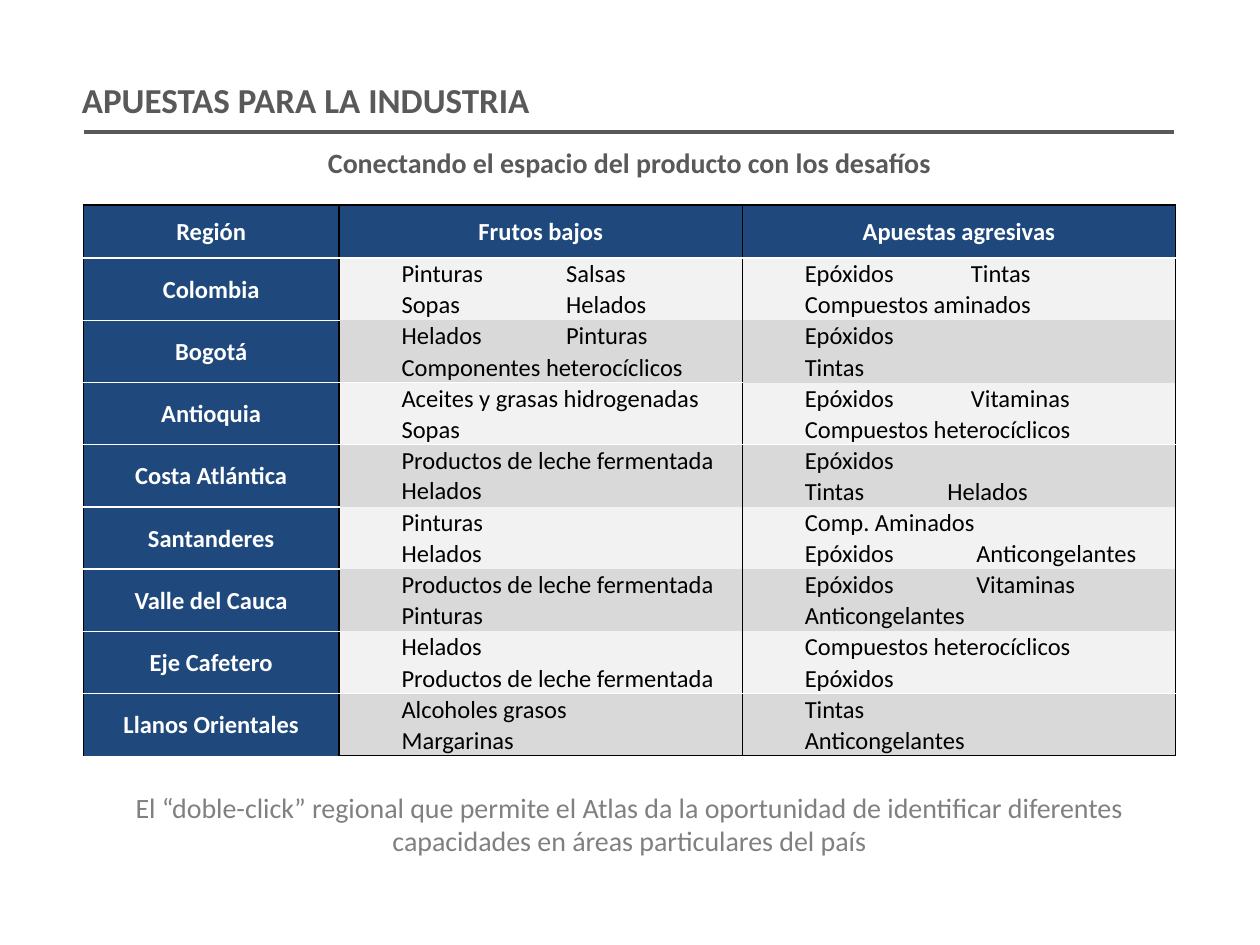
from dataclasses import dataclass

import pptx
import pptx.dml.color
import pptx.enum.shapes
import pptx.enum.text
import pptx.oxml
import pptx.oxml.ns
import pptx.util

Pt = pptx.util.Pt
RGBColor = pptx.dml.color.RGBColor
Align = pptx.enum.text.PP_ALIGN
qn = pptx.oxml.ns.qn

NAVY = RGBColor(0x1F, 0x49, 0x7D)
WHITE = RGBColor(0xFF, 0xFF, 0xFF)
BLACK = RGBColor(0x00, 0x00, 0x00)
DARK = RGBColor(0x59, 0x59, 0x59)
GREY = RGBColor(0x80, 0x80, 0x80)
BANDS = (RGBColor(0xF2, 0xF2, 0xF2), RGBColor(0xD9, 0xD9, 0xD9))
FONT = "Calibri"


@dataclass
class Entry:
    text: str
    second: str = ""
    tab: float = 95


@dataclass
class Region:
    name: str
    low: tuple[Entry, Entry]
    bold: tuple[Entry, Entry]
    rules: tuple[bool, bool] = (False, False)  # white rule below each product column
    joined: bool = False  # both low entries share one cell


HEADERS = ("Región", "Frutos bajos", "Apuestas agresivas")
REGIONS = (
    Region("Colombia", (Entry("Pinturas", "Salsas", 94), Entry("Sopas", "Helados", 94)),
           (Entry("Epóxidos", "Tintas"), Entry("Compuestos aminados"))),
    Region("Bogotá", (Entry("Helados", "Pinturas", 94), Entry("Componentes heterocíclicos")),
           (Entry("Epóxidos"), Entry("Tintas")), rules=(True, False)),
    Region("Antioquia", (Entry("Aceites y grasas hidrogenadas"), Entry("Sopas")),
           (Entry("Epóxidos", "Vitaminas"), Entry("Compuestos heterocíclicos")),
           rules=(True, True)),
    Region("Costa Atlántica", (Entry("Productos de leche fermentada"), Entry("Helados")),
           (Entry("Epóxidos"), Entry("Tintas", "Helados", 81.5)), joined=True),
    Region("Santanderes", (Entry("Pinturas"), Entry("Helados")),
           (Entry("Comp. Aminados"), Entry("Epóxidos", "Anticongelantes", 98))),
    Region("Valle del Cauca", (Entry("Productos de leche fermentada"), Entry("Pinturas")),
           (Entry("Epóxidos", "Vitaminas", 98), Entry("Anticongelantes"))),
    Region("Eje Cafetero", (Entry("Helados"), Entry("Productos de leche fermentada")),
           (Entry("Compuestos heterocíclicos"), Entry("Epóxidos")), rules=(True, True)),
    Region("Llanos Orientales", (Entry("Alcoholes grasos"), Entry("Margarinas")),
           (Entry("Tintas"), Entry("Anticongelantes"))),
)


def add_run(p, text: str, size: float, color: RGBColor, bold: bool = False) -> None:
    r = p.add_run()
    r.text = text
    r.font.name, r.font.size, r.font.bold = FONT, Pt(size), bold
    r.font.color.rgb = color


def add_text(s, left: float, top: float, width: float, height: float, text: str, size: float,
             color: RGBColor, bold: bool = False, align=Align.CENTER) -> None:
    tf = s.shapes.add_textbox(Pt(left), Pt(top), Pt(width), Pt(height)).text_frame
    tf.word_wrap = True
    tf.margin_left = tf.margin_right = tf.margin_top = tf.margin_bottom = 0
    tf.paragraphs[0].alignment = align
    add_run(tf.paragraphs[0], text, size, color, bold)


def style_cell(cell, fill: RGBColor, top: RGBColor | None, bottom: RGBColor | None,
               indent: float = 0.72) -> None:
    cell.margin_left = Pt(indent)
    cell.margin_right = cell.margin_top = Pt(0.72)
    cell.margin_bottom = 0
    cell.vertical_anchor = pptx.enum.text.MSO_ANCHOR.MIDDLE
    tc_pr = cell._tc.get_or_add_tcPr()
    for tag, color in (("a:lnL", BLACK), ("a:lnR", BLACK), ("a:lnT", top), ("a:lnB", bottom)):
        ln = tc_pr.makeelement(qn(tag), {"w": str(Pt(1))})
        tc_pr.append(ln)
        if color is None:
            ln.append(ln.makeelement(qn("a:noFill"), {}))
        else:
            solid = ln.makeelement(qn("a:solidFill"), {})
            solid.append(solid.makeelement(qn("a:srgbClr"), {"val": str(color)}))
            ln.append(solid)
    cell.fill.solid()
    cell.fill.fore_color.rgb = fill


def add_label(cell, text: str) -> None:
    p = cell.text_frame.paragraphs[0]
    p.alignment = Align.CENTER
    add_run(p, text, 14, WHITE, True)


def add_entry(p, entry: Entry) -> None:
    text = entry.text
    if entry.second:
        p_pr = p._p.get_or_add_pPr()
        tabs = p_pr.makeelement(qn("a:tabLst"), {})
        tabs.append(tabs.makeelement(qn("a:tab"), {"pos": str(Pt(entry.tab)), "algn": "l"}))
        p_pr.append(tabs)
        text += "\t" + entry.second
    add_run(p, text, 14, BLACK)


def add_region(table, i: int, region: Region) -> None:
    row = 1 + 2 * i
    last = i == len(REGIONS) - 1
    label = table.cell(row, 0)
    for k in range(2):
        style_cell(table.cell(row + k, 0), NAVY, WHITE if k == 0 else None,
                   (BLACK if last else WHITE) if k == 1 else None)
    label.merge(table.cell(row + 1, 0))
    add_label(label, region.name)

    above = REGIONS[i - 1].rules if i else (True, True)
    for col, entries in enumerate((region.low, region.bold), start=1):
        below = BLACK if last else WHITE if region.rules[col - 1] else None
        for k in range(2):
            style_cell(table.cell(row + k, col), BANDS[i % 2],
                       WHITE if k == 0 and above[col - 1] else None,
                       below if k == 1 else None, indent=35.7)
        joined = region.joined and col == 1
        if joined:
            table.cell(row, col).merge(table.cell(row + 1, col))
        for k, entry in enumerate(entries):
            tf = table.cell(row if joined else row + k, col).text_frame
            p = tf.add_paragraph() if joined and k else tf.paragraphs[0]
            add_entry(p, entry)


def main() -> None:
    prs = pptx.Presentation()
    prs.slide_width, prs.slide_height = Pt(720), Pt(540)
    s = prs.slides.add_slide(prs.slide_layouts[6])

    # Title rule
    line = s.shapes.add_connector(pptx.enum.shapes.MSO_CONNECTOR.STRAIGHT,
                                  Pt(671), Pt(75.6), Pt(48.3), Pt(75.6))
    line.line.color.rgb, line.line.width = DARK, Pt(2)
    sp_pr = line._element.spPr
    sp_pr.append(sp_pr.makeelement(qn("a:effectLst"), {}))

    # Table of regions
    widths = (146.2, 230.4, 247.6)
    heights = [30.5] + [17.8] * (2 * len(REGIONS))
    table = s.shapes.add_table(len(heights), len(widths), Pt(47.6), Pt(117),
                               Pt(sum(widths)), Pt(sum(heights))).table
    table.first_row = table.horz_banding = False
    for column, width in zip(table.columns, widths):
        column.width = Pt(width)
    for row, height in zip(table.rows, heights):
        row.height = Pt(height)
    for col, header in enumerate(HEADERS):
        style_cell(table.cell(0, col), NAVY, BLACK, WHITE)
        add_label(table.cell(0, col), header)
    for i, region in enumerate(REGIONS):
        add_region(table, i, region)

    # Closing remark, subtitle and title
    add_text(s, 48, 451.5, 623.5, 39,
             "El “doble-click” regional que permite el Atlas da la oportunidad de identificar "
             "diferentes capacidades en áreas particulares del país", 16, GREY)
    add_text(s, 48, 83, 623.5, 19.5,
             "Conectando el espacio del producto con los desafíos", 16, DARK, True)
    add_text(s, 46.8, 45, 617, 39, "APUESTAS PARA LA INDUSTRIA", 20, DARK, True, Align.LEFT)

    prs.save("out.pptx")


if __name__ == "__main__":
    main()
